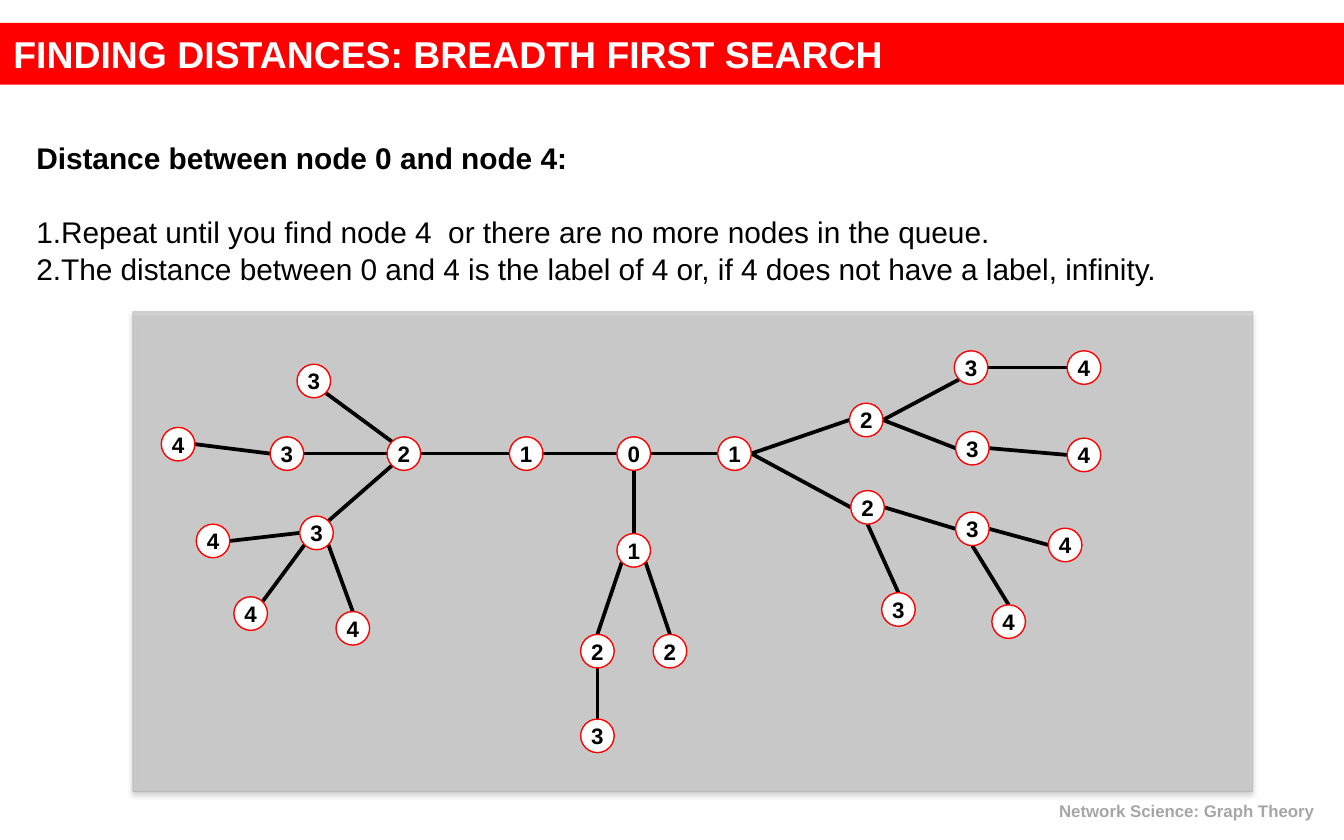
from math import cos, sin, radians
from lxml.etree import SubElement
from pptx import Presentation
from pptx.dml.color import RGBColor
from pptx.enum.shapes import MSO_CONNECTOR, MSO_SHAPE
from pptx.enum.text import MSO_ANCHOR, MSO_AUTO_SIZE, PP_ALIGN
from pptx.oxml import parse_xml
from pptx.oxml.ns import nsdecls, qn
from pptx.util import Inches, Pt

RED = RGBColor(0xFF, 0x00, 0x00)
WHITE = RGBColor(0xFF, 0xFF, 0xFF)
BLACK = RGBColor(0x00, 0x00, 0x00)
SILVER = RGBColor(0xBF, 0xBF, 0xBF)
GREY = RGBColor(0xA6, 0xA6, 0xA6)


def write(para, text, color, **look):
    run = para.add_run()
    run.text = text
    for key, value in {"name": "Arial", "bold": True, **look}.items():
        setattr(run.font, key, value)
    run.font.color.rgb = color


def place(shape, left, top, width, height):
    box = {"left": left, "top": top, "width": width, "height": height}
    for key, value in box.items():
        setattr(shape, key, Inches(value))


deck = Presentation()
deck.slide_width = Inches(10)
deck.slide_height = Inches(6.25)
slide = deck.slides.add_slide(deck.slide_layouts[1])
shapes = slide.shapes

panel = shapes.add_shape(
    MSO_SHAPE.RECTANGLE, Inches(0.99), Inches(2.32), Inches(8.33), Inches(3.57))
panel.fill.solid()
panel.fill.fore_color.rgb = SILVER
panel.line.color.rgb = GREY
panel.line.width = Pt(0.75)
for paint, alpha in zip(panel.element.spPr.iter(qn("a:srgbClr")), (51, 48)):
    SubElement(paint, qn("a:alpha"), val=str(alpha * 1000))
panel.element.spPr.append(parse_xml(
    f'<a:effectLst {nsdecls("a")}><a:outerShdw blurRad="{Pt(3.1)}" dist="{Pt(1.8)}" '
    'dir="5400000" rotWithShape="0"><a:srgbClr val="000000"><a:alpha val="35000"/>'
    '</a:srgbClr></a:outerShdw></a:effectLst>'))

title = shapes.title
place(title, 0, 0.17, 10, 0.46)
title.fill.solid()
title.fill.fore_color.rgb = RED
frame = title.text_frame
frame.auto_size = MSO_AUTO_SIZE.NONE
frame.vertical_anchor = MSO_ANCHOR.MIDDLE
frame.paragraphs[0].alignment = PP_ALIGN.LEFT
write(frame.paragraphs[0], "FINDING DISTANCES: BREADTH FIRST SEARCH", WHITE, size=Pt(20))

body = slide.placeholders[1]
place(body, 0.17, 0.83, 8.83, 1.61)
frame = body.text_frame
frame.auto_size = MSO_AUTO_SIZE.NONE
rows = [
    ("Distance between node 0 and node 4:", True, 1.6, 0),
    ("Repeat until you find node 4  or there are no more nodes in the queue.", False, 1.05, 19.3),
    ("The distance between 0 and 4 is the label of 4 or, if 4 does not have a label, infinity.",
     False, 1.05, 0),
]
for i, (text, bold, pitch, gap) in enumerate(rows):
    para = frame.add_paragraph() if i else frame.paragraphs[0]
    para.line_spacing = pitch
    para.space_before = Pt(gap)
    write(para, text, BLACK, size=Pt(16), bold=bold)
    props = para._p.get_or_add_pPr()
    props.set("marL", "0")
    props.set("indent", "0")
    if bold:
        SubElement(props, qn("a:buNone"))
    else:
        SubElement(props, qn("a:buAutoNum"), type="arabicPeriod")

foot = shapes.add_textbox(Inches(7.08), Inches(5.91), Inches(2.83), Inches(0.25))
foot.text_frame.word_wrap = True
para = foot.text_frame.paragraphs[0]
para.alignment = PP_ALIGN.RIGHT
write(para, "Network Science: Graph Theory ", GREY, size=Pt(9))

SIZE = 0.25
HALF = SIZE / 2
nodes = {
    "root": (0, 4.59, 3.25),
    "east": (1, 5.34, 3.25), "west": (1, 3.79, 3.25), "south": (1, 4.59, 3.97),
    "e1": (2, 6.32, 3), "e2": (2, 6.33, 3.65),
    "s1": (2, 4.32, 4.72), "s2": (2, 4.86, 4.72), "w1": (2, 2.88, 3.25),
    "e11": (3, 7.1, 2.61), "e12": (3, 7.11, 3.21),
    "e21": (3, 7.11, 3.81), "e22": (3, 6.56, 4.41),
    "w11": (3, 2.21, 2.71), "w12": (3, 2.01, 3.25), "w13": (3, 2.23, 3.84),
    "s11": (3, 4.32, 5.35),
    "e111": (4, 7.94, 2.61), "e121": (4, 7.94, 3.26),
    "e211": (4, 7.8, 3.93), "e212": (4, 7.38, 4.5),
    "w121": (4, 1.2, 3.18), "w131": (4, 1.46, 3.9),
    "w132": (4, 1.74, 4.44), "w133": (4, 2.5, 4.55),
}
turns = {side: radians(45 * i) for i, side in enumerate("E SE S SW W NW N NE".split())}
edges = """
root W west E, root E east W, root S south N, west W w1 E,
south SW s1 N, south SE s2 N, s1 S s11 N,
east E e1 W, east E e2 W, e1 E e11 SW, e1 E e12 W, e2 E e21 W, e2 S e22 N,
w1 NW w11 SE, w1 W w12 E, w1 SW w13 NE,
e11 E e111 W, e12 E e121 W, e21 E e211 W, e21 S e212 N,
w12 W w121 E, w13 W w131 E, w13 SW w132 NE, w13 SE w133 N
"""

for edge in edges.split(","):
    start, out, end, into = edge.split()
    ends = []
    for name, side in ((start, out), (end, into)):
        level, left, top = nodes[name]
        ends += [Inches(left + HALF + HALF * cos(turns[side])),
                 Inches(top + HALF + HALF * sin(turns[side]))]
    link = shapes.add_connector(MSO_CONNECTOR.STRAIGHT, *ends)
    link.line.color.rgb = BLACK
    link.line.width = Pt(2)
    SubElement(link.element.spPr, qn("a:effectLst"))

for level, left, top in nodes.values():
    node = shapes.add_shape(
        MSO_SHAPE.OVAL, Inches(left), Inches(top), Inches(SIZE), Inches(SIZE))
    node.shadow.inherit = False
    node.fill.solid()
    node.fill.fore_color.rgb = WHITE
    node.line.color.rgb = RED
    node.line.width = Pt(0.75)
    frame = node.text_frame
    look = {"margin_left": 0, "margin_right": 0, "margin_top": 0, "margin_bottom": 0,
            "word_wrap": False, "vertical_anchor": MSO_ANCHOR.MIDDLE}
    for key, value in look.items():
        setattr(frame, key, value)
    frame.paragraphs[0].alignment = PP_ALIGN.CENTER
    write(frame.paragraphs[0], str(level), BLACK, size=Pt(12))

deck.save("out.pptx")
